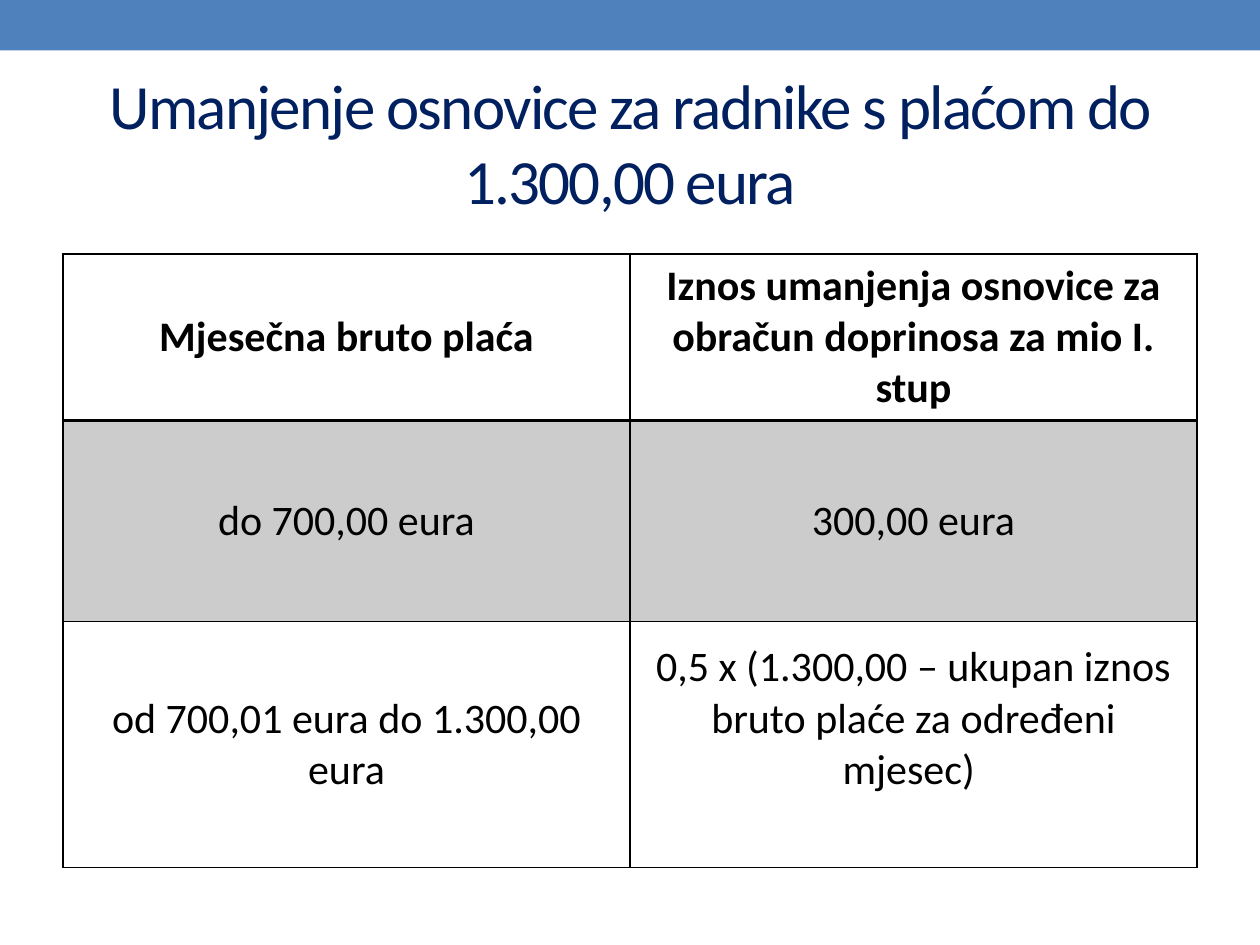
from lxml import etree
from pptx import Presentation
from pptx.dml.color import RGBColor
from pptx.enum import shapes, text
from pptx.oxml.ns import qn
from pptx.util import Pt

BLUE = RGBColor(0x4F, 0x81, 0xBD)
NAVY = RGBColor(0x00, 0x20, 0x60)
BLACK = RGBColor(0x00, 0x00, 0x00)

HEADER_FONT = {"name": "Calibri", "size": Pt(24), "bold": True}
BODY_FONT = {**HEADER_FONT, "bold": False}
TITLE_FONT = {"name": "Calibri", "size": Pt(36), "bold": False}

ROWS = [
    ("Mjesečna bruto plaća",
     "Iznos umanjenja osnovice za obračun doprinosa za mio I. stup"),
    ("do 700,00 eura", "300,00 eura"),
    ("od 700,01 eura do 1.300,00 eura",
     "0,5 x (1.300,00 – ukupan iznos bruto plaće za određeni mjesec) "),
]
ROW_HEIGHTS = [88.5, 115, 140.5]


def write(tf, words, font, color):
    """Put one centred, formatted run into a text frame and return it."""
    p = tf.paragraphs[0]
    p.alignment = text.PP_ALIGN.CENTER
    r = p.add_run()
    r.text = words
    for name, value in font.items():
        setattr(r.font, name, value)
    r.font.color.rgb = color
    return r


def add_borders(cell, widths):
    """Draw black left, right, top and bottom borders, widths in points."""
    tcPr = cell._tc.get_or_add_tcPr()
    for i, (side, width) in enumerate(zip("LRTB", widths)):
        ln = etree.Element(qn(f"a:ln{side}"), w=str(Pt(width)))
        fill = etree.SubElement(ln, qn("a:solidFill"))
        etree.SubElement(fill, qn("a:srgbClr"), val=str(BLACK))
        tcPr.insert(i, ln)


prs = Presentation()
prs.slide_width, prs.slide_height = Pt(720), Pt(540)
s = prs.slides.add_slide(prs.slide_layouts[5])

# Top band
band = s.shapes.add_shape(shapes.MSO_SHAPE.RECTANGLE, 0, 0, prs.slide_width, Pt(28.8))
band.shadow.inherit = False
band.fill.solid()
band.fill.fore_color.rgb = BLUE
band.line.fill.background()

# Title
title = s.shapes.title
title.left, title.top, title.width, title.height = Pt(36), Pt(42), Pt(648), Pt(78)
tf = title.text_frame
tf.word_wrap = True
tf.auto_size = text.MSO_AUTO_SIZE.NONE
tf.vertical_anchor = text.MSO_ANCHOR.MIDDLE
r = write(tf, "Umanjenje osnovice za radnike s plaćom do 1.300,00 eura", TITLE_FONT, NAVY)
r.font._element.set("spc", "-100")

# Table
table = s.shapes.add_table(len(ROWS), 2, Pt(36), Pt(145.2), Pt(648), Pt(sum(ROW_HEIGHTS))).table
for i, (row, height) in enumerate(zip(ROWS, ROW_HEIGHTS)):
    table.rows[i].height = Pt(height)
    for j, words in enumerate(row):
        cell = table.cell(i, j)
        cell.vertical_anchor = text.MSO_ANCHOR.MIDDLE
        write(cell.text_frame, words, BODY_FONT if i else HEADER_FONT, BLACK)
        if i == 1:
            cell.fill.solid()
            cell.fill.fore_color.rgb = BLACK
            color = cell._tc.tcPr.find(".//" + qn("a:srgbClr"))
            etree.SubElement(color, qn("a:alpha"), val="20000")
        else:
            cell.fill.background()
        add_borders(cell, (1, 1, 2 if i == 1 else 1, 2 if i == 0 else 1))

# The formula sits one line above the middle of its cell
table.cell(2, 1).margin_bottom = Pt(33)

prs.save("out.pptx")
